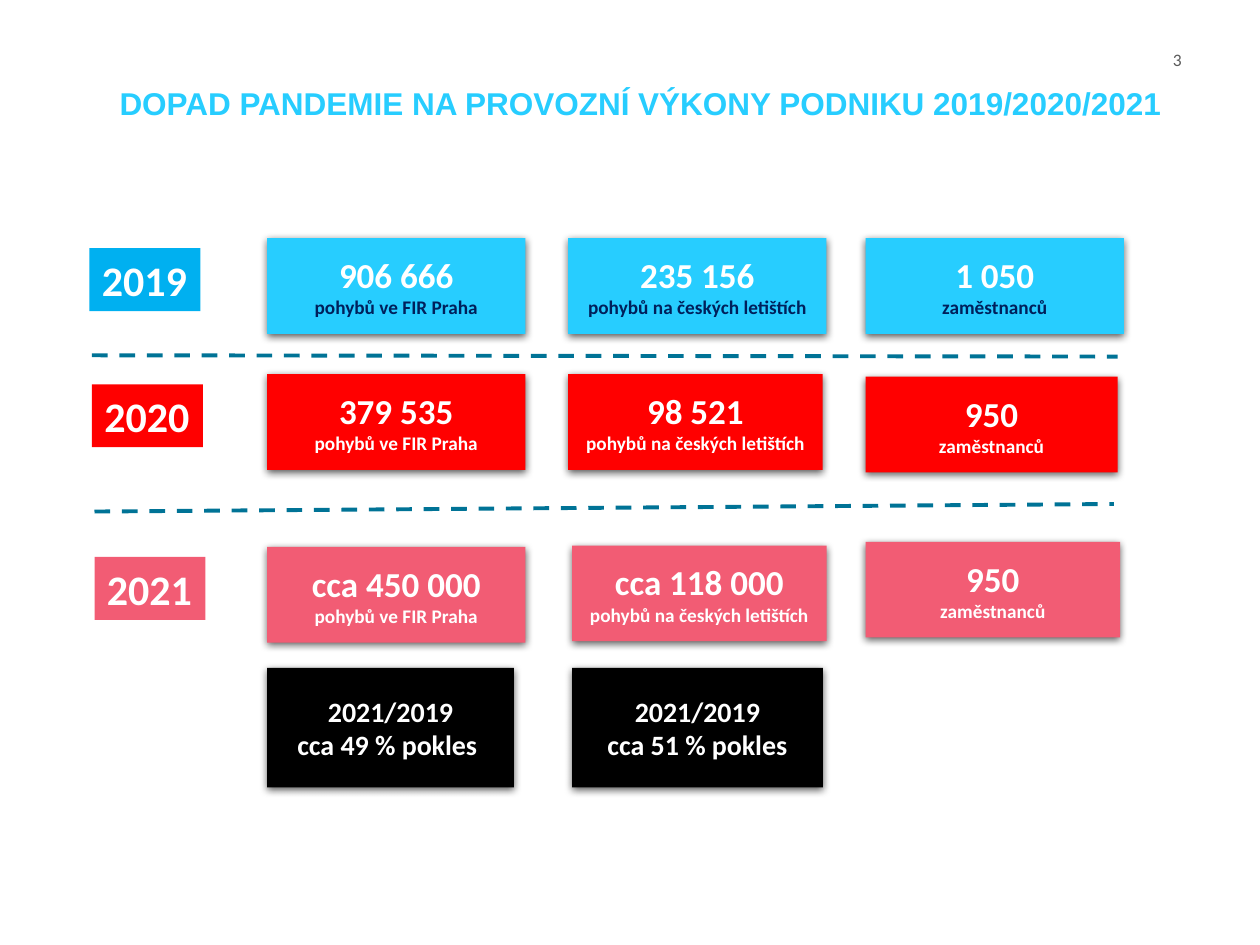
from dataclasses import dataclass

from lxml import etree
from pptx import Presentation
from pptx import util as u
from pptx.dml.color import RGBColor
from pptx.enum import dml, shapes, text
from pptx.oxml import parse_xml
from pptx.oxml.ns import nsdecls, qn


@dataclass(frozen=True)
class Theme:
    """Colours, fonts and type sizes."""
    sky: str = "27CDFF"
    blue: str = "00B0F0"
    navy: str = "00205B"
    teal: str = "007396"
    red: str = "FF0000"
    rose: str = "F25C74"
    black: str = "000000"
    white: str = "FFFFFF"
    grey: str = "5A5A5A"
    body: str = "Calibri"
    head: str = "Arial"
    year: int = 24
    value: int = 20
    title: int = 18
    drop: int = 16
    note: int = 11
    page: int = 10


class Board:
    """Draws on one slide with a grid of 100 columns and 75 rows."""

    def __init__(self, deck, theme):
        """Add a blank slide and work out the grid."""
        self.look = theme
        self.slide = deck.slides.add_slide(deck.slide_layouts[6])
        self.col = deck.slide_width / 100
        self.row = deck.slide_height / 75

    def place(self, x, y, w, h):
        """Turn columns and rows into lengths."""
        return [u.Emu(round(n)) for n in
                (x * self.col, y * self.row, w * self.col, h * self.row)]

    def style(self, para, words, size, color, bold=True, face=None):
        """Fill a paragraph and set its font."""
        para.text = words
        font = para.font
        font.name = face or self.look.body
        font.size = u.Pt(size)
        font.bold = bold
        font.color.rgb = RGBColor.from_string(color)

    def label(self, spot, words, size, color, bold=True, face=None, side=0.1):
        """Add a line of plain text."""
        frame = self.slide.shapes.add_textbox(*self.place(*spot)).text_frame
        frame.word_wrap = True
        frame.margin_left = frame.margin_right = u.Inches(side)
        self.style(frame.paragraphs[0], words, size, color, bold, face)

    def block(self, spot, fill):
        """Add a filled box with no outline."""
        box = self.slide.shapes.add_shape(
            shapes.MSO_SHAPE.RECTANGLE, *self.place(*spot))
        box.shadow.inherit = False
        box.fill.solid()
        box.fill.fore_color.rgb = RGBColor.from_string(fill)
        box.line.fill.background()
        return box

    def year(self, spot, words, fill):
        """Add a year tag."""
        frame = self.block(spot, fill).text_frame
        frame.word_wrap = False
        frame.vertical_anchor = text.MSO_ANCHOR.TOP
        para = frame.paragraphs[0]
        para.alignment = text.PP_ALIGN.LEFT
        self.style(para, words, self.look.year, self.look.white)

    def card(self, spot, fill, lines):
        """Add a shadowed card from (words, size, colour) lines."""
        box = self.block(spot, fill)
        glow = box._element.spPr.find(qn("a:effectLst"))
        glow.append(parse_xml(
            f'<a:outerShdw {nsdecls("a")} blurRad="57150" dist="19050" '
            'dir="5400000" algn="ctr" rotWithShape="0"><a:srgbClr '
            f'val="{self.look.black}"><a:alpha val="63000"/></a:srgbClr>'
            '</a:outerShdw>'))
        frame = box.text_frame
        frame.word_wrap = True
        frame.vertical_anchor = text.MSO_ANCHOR.MIDDLE
        frame.margin_left = frame.margin_right = u.Inches(0.08)
        frame.margin_top = frame.margin_bottom = u.Inches(0.08)
        for i, line in enumerate(lines):
            para = frame.add_paragraph() if i else frame.paragraphs[0]
            para.alignment = text.PP_ALIGN.CENTER
            self.style(para, *line)

    def rule(self, x, y, end, low):
        """Add a dashed line between two grid points."""
        line = self.slide.shapes.add_connector(
            shapes.MSO_CONNECTOR.STRAIGHT, *self.place(x, y, end, low))
        line.line.color.rgb = RGBColor.from_string(self.look.teal)
        line.line.width = u.Pt(2.25)
        line.line.dash_style = dml.MSO_LINE.DASH
        etree.SubElement(line._element.spPr, qn("a:effectLst"))


def main():
    """Build the slide."""
    deck = Presentation()
    deck.slide_width, deck.slide_height = u.Inches(10), u.Inches(7.5)
    look = Theme()
    board = Board(deck, look)

    board.label((93.1, 3.4, 6.4, 2.7), "3", look.page, look.grey,
                bold=False, side=0)
    board.label((8.5, 6.2, 90.1, 4.4),
                "DOPAD PANDEMIE NA PROVOZNÍ VÝKONY PODNIKU 2019/2020/2021",
                look.title, look.sky, face=look.head)
    board.rule(7.3, 28.2, 88.7, 28.3)
    board.rule(7.5, 40.6, 88.4, 40)

    notes = ("pohybů ve FIR Praha", "pohybů na českých letištích",
             "zaměstnanců")
    years = (
        ("2019", 7.1, 19.7, look.blue, look.sky, look.navy,
         ((21.2, 18.9, 20.5, "906 666"), (45.1, 18.9, 20.5, "235 156"),
          (68.7, 18.9, 20.5, "1 050"))),
        ("2020", 7.3, 30.5, look.red, look.red, look.white,
         ((21.2, 29.7, 20.5, "379 535"), (45.1, 29.7, 20.2, "98 521"),
          (68.7, 29.9, 20, "950"))),
        ("2021", 7.5, 44.2, look.rose, look.rose, look.white,
         ((21.2, 43.4, 20.5, "cca 450 000"), (45.4, 43.3, 20.2, "cca 118 000"),
          (68.7, 43, 20.2, "950"))),
    )
    for year, left, top, tag, fill, ink, cards in years:
        board.year((left, top, 8.8, 5), year, tag)
        for (x, y, w, value), note in zip(cards, notes):
            board.card((x, y, w, 7.6), fill,
                       ((value, look.value, look.white),
                        (note, look.note, ink)))

    for x, w, drop in ((21.2, 19.6, "cca 49 % pokles "),
                       (45.4, 19.9, "cca 51 % pokles")):
        board.card((x, 53, w, 9.5), look.black,
                   [(words, look.drop, look.white)
                    for words in ("2021/2019", drop)])
    deck.save("out.pptx")


if __name__ == "__main__":
    main()
